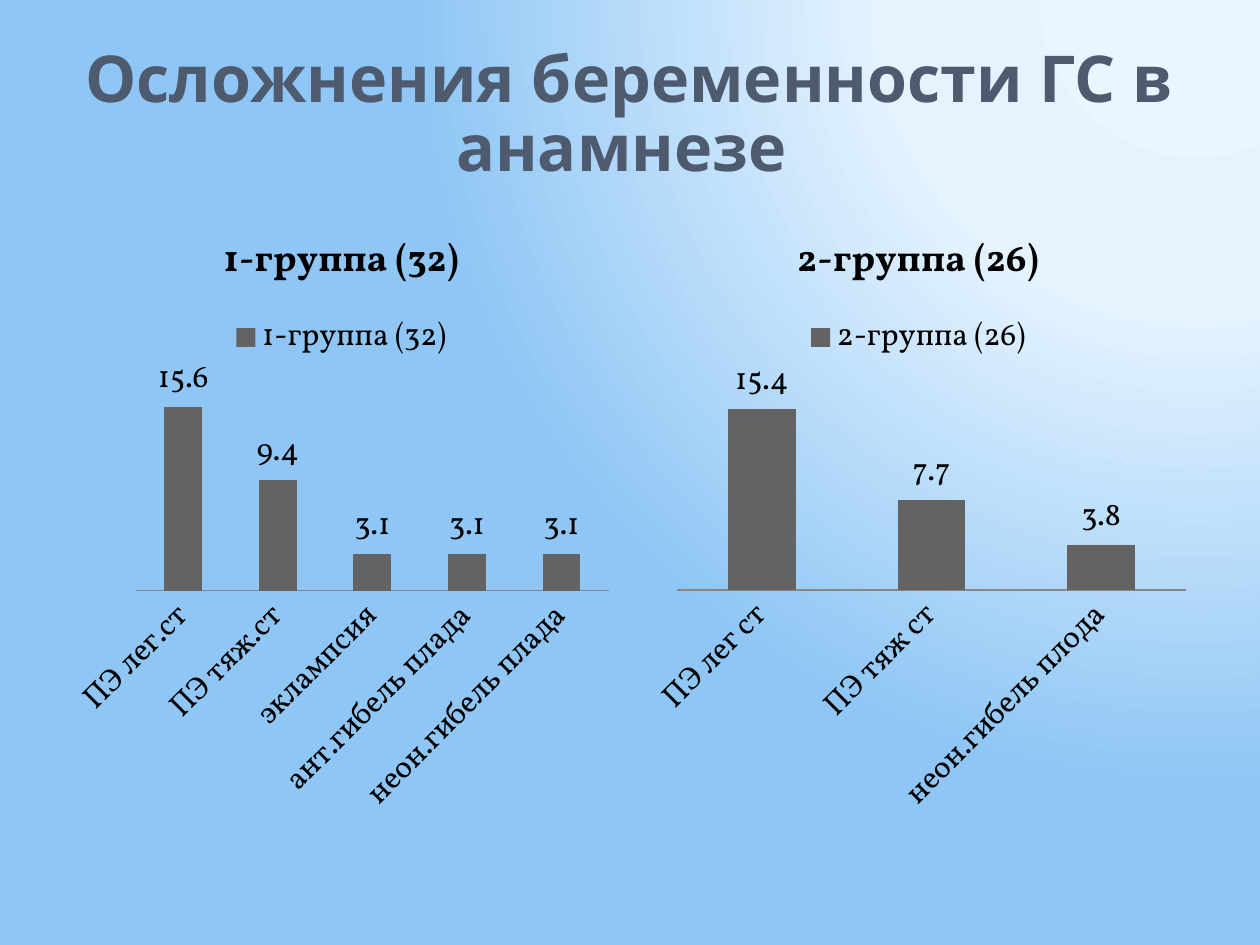
from pptx import Presentation
from pptx.chart.data import CategoryChartData
from pptx.dml.color import RGBColor
from pptx.enum.chart import XL_CHART_TYPE, XL_LABEL_POSITION, XL_LEGEND_POSITION, XL_TICK_MARK
from pptx.enum.text import MSO_ANCHOR, MSO_AUTO_SIZE, PP_ALIGN
from pptx.oxml import parse_xml
from pptx.oxml.ns import nsdecls
from pptx.util import Pt

COLUMN = XL_CHART_TYPE.COLUMN_CLUSTERED
OUTSIDE = XL_LABEL_POSITION.OUTSIDE_END
TOP = XL_LEGEND_POSITION.TOP
NO_TICK = XL_TICK_MARK.NONE
MIDDLE = MSO_ANCHOR.MIDDLE
NO_FIT = MSO_AUTO_SIZE.NONE
CENTER = PP_ALIGN.CENTER

PX = 914400 // 126
HEADING_FONT = "Noto Sans"
BODY_FONT = "Vollkorn"
LABEL_ANGLE = -45

GRADIENT = [(0, "EAF5FF"), (40, "E5F3FF"), (100, "8FC6F5")]
GROUPS = [
    ("1-группа (32)",
     ["ПЭ лег.ст", "ПЭ тяж.ст", "эклампсия", "ант.гибель плада", "неон.гибель плада"],
     [15.6, 9.4, 3.1, 3.1, 3.1]),
    ("2-группа (26)",
     ["ПЭ лег ст", "ПЭ тяж ст", "неон.гибель плода"],
     [15.4, 7.7, 3.8]),
]


def emu(box):
    return [v * PX for v in box]


def rgb(value):
    return RGBColor.from_string(value)


def style_font(font, name, size, color, bold=False):
    font.name = name
    font.size = Pt(size)
    font.bold = bold
    font.color.rgb = rgb(color)


def set_background(slide):
    stops = "".join(
        f'<a:gs pos="{pos * 1000}"><a:srgbClr val="{color}"/></a:gs>'
        for pos, color in GRADIENT)
    bg = parse_xml(
        f'<p:bg {nsdecls("p", "a")}><p:bgPr><a:gradFill rotWithShape="1">'
        f'<a:gsLst>{stops}</a:gsLst><a:path path="circle">'
        '<a:fillToRect l="95000" t="-106000" r="5000" b="206000"/></a:path>'
        '</a:gradFill><a:effectLst/></p:bgPr></p:bg>')
    slide.element.cSld.insert(0, bg)


def add_title(slide, box, text):
    sp = slide.shapes.title
    sp.left, sp.top, sp.width, sp.height = emu(box)
    tf = sp.text_frame
    tf.text = text
    tf.word_wrap = True
    tf.auto_size = NO_FIT
    tf.vertical_anchor = MIDDLE
    p = tf.paragraphs[0]
    p.alignment = CENTER
    p.line_spacing = 0.88
    style_font(p.font, HEADING_FONT, 36.9, "4E5B6F", True)


def add_group_chart(slide, box, name, categories, values):
    data = CategoryChartData()
    data.categories = categories
    data.add_series(name, values)
    chart = slide.shapes.add_chart(COLUMN, *emu(box), data).chart
    style_font(chart.font, BODY_FONT, 18, "000000")

    chart.has_title = True
    tf = chart.chart_title.text_frame
    tf.text = name
    style_font(tf.paragraphs[0].font, BODY_FONT, 21.6, "000000", True)
    chart.chart_title.include_in_layout = False

    chart.has_legend = True
    chart.legend.position = TOP
    chart.legend.include_in_layout = False

    axis = chart.category_axis
    axis.major_tick_mark = NO_TICK
    axis.format.line.color.rgb = rgb("868686")
    style_font(axis.tick_labels.font, BODY_FONT, 18, "000000")
    axis.element.txPr.bodyPr.set("rot", str(LABEL_ANGLE * 60000)) if hasattr(axis, "element") else None
    chart.value_axis.visible = False
    chart.value_axis.has_major_gridlines = False

    plot = chart.plots[0]
    plot.gap_width = 150
    plot.vary_by_categories = False
    plot.has_data_labels = True
    labels = plot.data_labels
    labels.show_value = True
    labels.position = OUTSIDE
    fill = plot.series[0].format.fill
    fill.solid()
    fill.fore_color.rgb = rgb("636363")


def main():
    prs = Presentation()
    prs.slide_width, prs.slide_height = emu((1260, 945))
    slide = prs.slides.add_slide(prs.slide_layouts[5])
    set_background(slide)
    add_title(slide, (63, 38, 1134, 157), "Осложнения беременности ГС в анамнезе ")
    for i, group in enumerate(GROUPS):
        add_group_chart(slide, (63 + 577 * i, 204, 557, 624), *group)
    prs.save("out.pptx")


if __name__ == "__main__":
    main()
